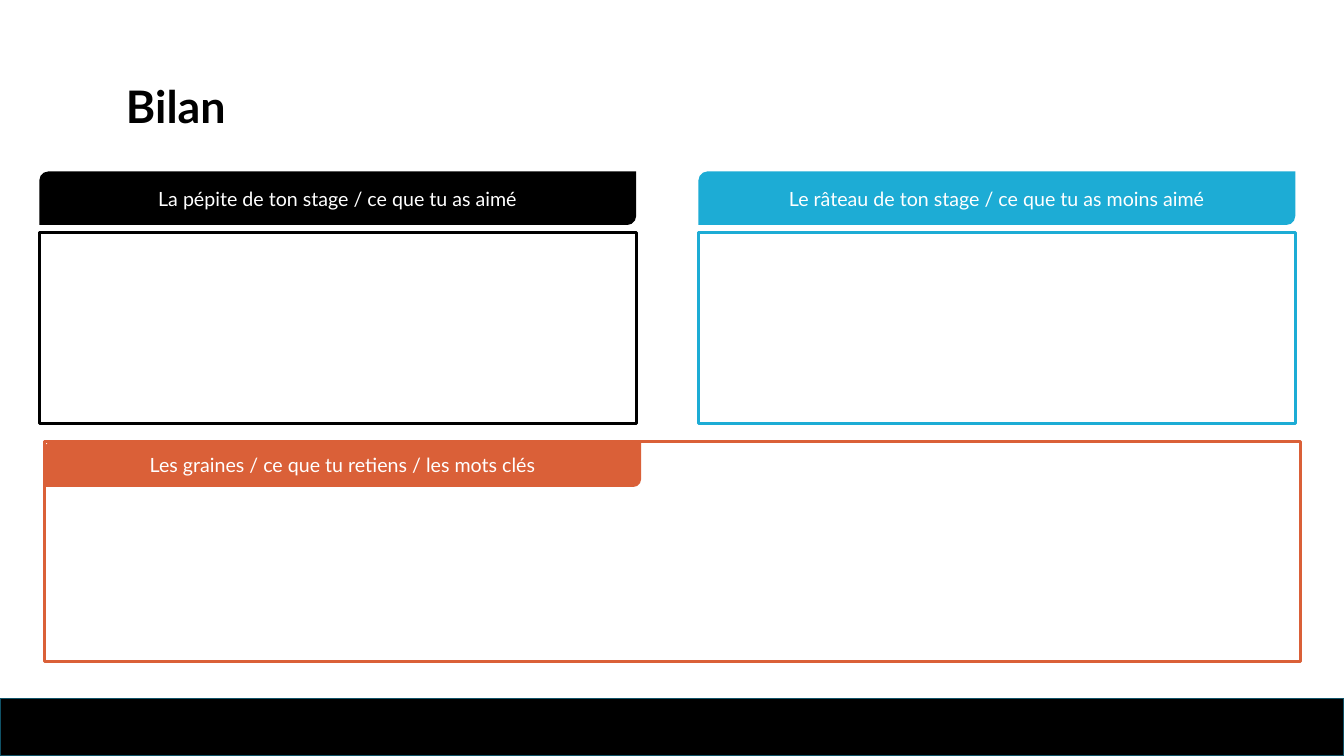
from dataclasses import dataclass
from pptx import Presentation
from pptx.dml.color import RGBColor
from pptx.enum.shapes import MSO_SHAPE as Shape
from pptx.enum.text import MSO_ANCHOR as Anchor, PP_ALIGN as Align
from pptx.util import Pt


@dataclass(frozen=True)
class Theme:
    font: str = "Lato"
    black: str = "000000"
    white: str = "FFFFFF"
    blue: str = "1DACD5"
    orange: str = "DA6038"
    bar_edge: str = "105267"
    title_size: float = 32
    label_size: float = 14
    frame_width: float = 2.25


def write(tf, text, *, font, size, color, bold=False, align=Align.LEFT,
          anchor=Anchor.TOP, spacing=1.0):
    tf.word_wrap = True
    tf.vertical_anchor = anchor
    p = tf.paragraphs[0]
    p.alignment = align
    p.line_spacing = spacing
    p.space_before = Pt(0)
    r = p.add_run()
    r.text = text
    r.font.name, r.font.size, r.font.bold = font, Pt(size), bold
    r.font.color.rgb = RGBColor.from_string(color)


class SlideBuilder:
    def __init__(self, prs, theme):
        self.theme = theme
        self.s = prs.slides.add_slide(prs.slide_layouts[5])

    def title(self, text, x, y, w, h):
        sp = self.s.shapes.title
        sp.left, sp.top, sp.width, sp.height = Pt(x), Pt(y), Pt(w), Pt(h)
        t = self.theme
        write(sp.text_frame, text, font=t.font, size=t.title_size,
              color=t.black, bold=True, spacing=0.9)

    def shape(self, kind, x, y, w, h, fill, line=None, line_width=1):
        sp = self.s.shapes.add_shape(kind, Pt(x), Pt(y), Pt(w), Pt(h))
        sp.shadow.inherit = False
        sp.fill.solid()
        sp.fill.fore_color.rgb = RGBColor.from_string(fill)
        if line:
            sp.line.color.rgb = RGBColor.from_string(line)
            sp.line.width = Pt(line_width)
        else:
            sp.line.fill.background()
        return sp

    def frame(self, x, y, w, h, color):
        t = self.theme
        self.shape(Shape.RECTANGLE, x, y, w, h, t.white, color, t.frame_width)

    def header(self, text, x, y, w, h, color):
        sp = self.shape(Shape.ROUND_2_DIAG_RECTANGLE, x, y, w, h, color)
        t = self.theme
        write(sp.text_frame, text, font=t.font, size=t.label_size,
              color=t.white, align=Align.CENTER, anchor=Anchor.MIDDLE)


def main():
    prs = Presentation()
    prs.slide_width, prs.slide_height = Pt(960), Pt(540)
    theme = Theme()
    b = SlideBuilder(prs, theme)

    # Footer bar and title
    b.shape(Shape.RECTANGLE, 0, 499, 960, 41, theme.black, theme.bar_edge)
    b.title("Bilan", 82.8, 57, 466.5, 78.5)

    # Two upper panels, each with a header above its frame
    header_w = 426.3
    panels = [
        ("La pépite de ton stage / ce que tu as aimé", theme.black),
        ("Le râteau de ton stage / ce que tu as moins aimé", theme.blue),
    ]
    for i, (text, color) in enumerate(panels):
        x = 28.1 + i * 470.8
        b.frame(x, 166.3, header_w, 136, color)
        b.header(text, x, 122.5, header_w, 38.2, color)

    # Wide lower panel with its header inside the frame
    x, y = 31.6, 315.4
    b.frame(x, y, 897.1, 157, theme.orange)
    b.header("Les graines / ce que tu retiens / les mots clés",
             x, y, header_w, 32.4, theme.orange)

    prs.save("out.pptx")


if __name__ == "__main__":
    main()
